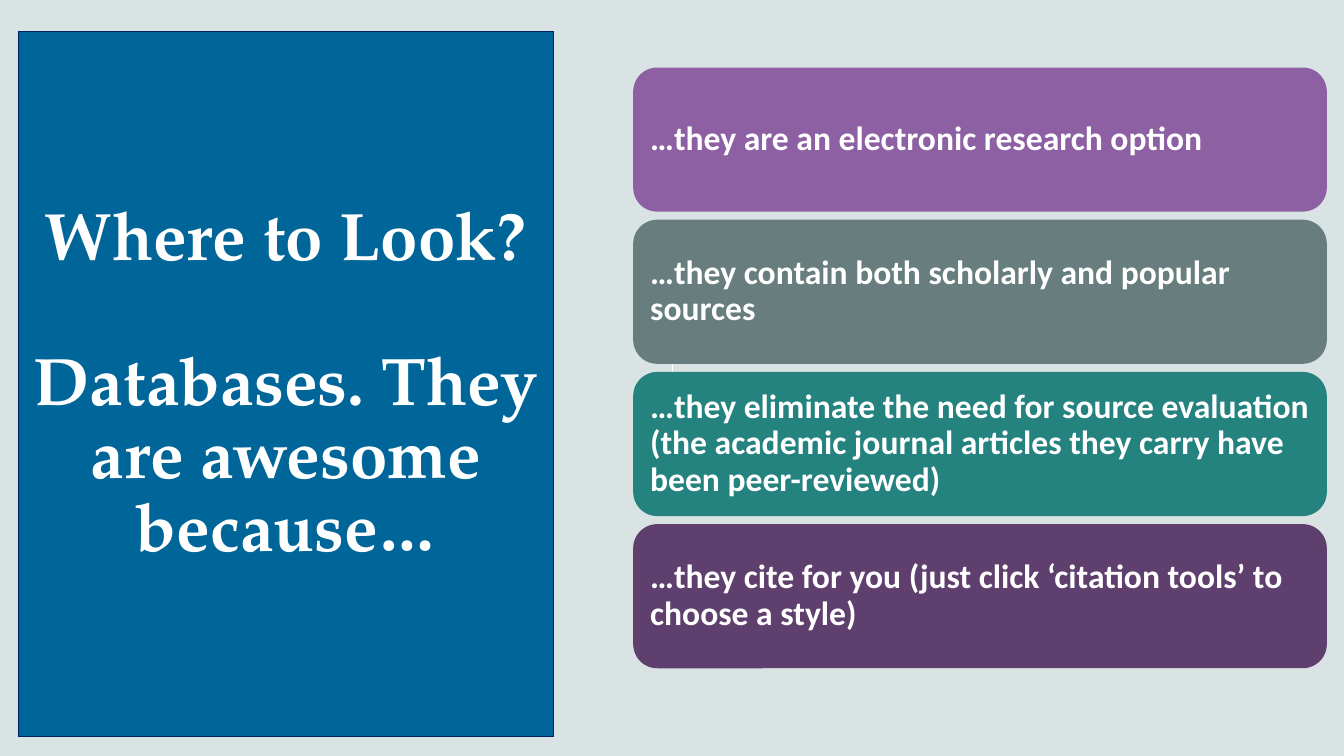
from pptx import Presentation
from pptx.dml.color import RGBColor
from pptx.enum.shapes import MSO_CONNECTOR as CONNECTOR, MSO_SHAPE as SHAPE
from pptx.enum.text import MSO_ANCHOR as ANCHOR, PP_ALIGN as ALIGN
from pptx.oxml.ns import qn
from pptx.util import Inches, Pt
from lxml import etree

REASONS = [
    ("…they are an electronic research option", "8D5FA3"),
    ("…they contain both scholarly and popular sources", "687E7E"),
    ("…they eliminate the need for source evaluation (the academic journal "
     "articles they carry have been peer-reviewed)", "24827F"),
    ("…they cite for you (just click ‘citation tools’ to choose a style)", "5E3F6D"),
]


def color(hex_code):
    return RGBColor.from_string(hex_code)


def add_panel(slide, kind, box, fill):
    """Add a filled shape without outline or shadow, ready for centred text."""
    panel = slide.shapes.add_shape(kind, *map(Inches, box))
    panel.shadow.inherit = False
    panel.fill.solid()
    panel.fill.fore_color.rgb = color(fill)
    panel.line.fill.background()
    panel.text_frame.word_wrap = True
    panel.text_frame.vertical_anchor = ANCHOR.MIDDLE
    return panel


def style_paragraph(paragraph, font_name, size, align):
    paragraph.alignment = align
    paragraph.line_spacing = 0.9
    font = paragraph.font
    font.name, font.size, font.bold = font_name, Pt(size), True
    font.color.rgb = color("FFFFFF")


def add_heading(slide, box):
    heading = add_panel(slide, SHAPE.RECTANGLE, box, "006699")
    heading.line.color.rgb = color("002060")
    heading.line.width = Pt(0.75)
    frame = heading.text_frame
    question, answer = frame.paragraphs[0], frame.add_paragraph()
    question.text = "Where to Look?"
    answer.text = "Databases. They are awesome because…"
    for paragraph in (question, answer):
        style_paragraph(paragraph, "TeX Gyre Pagella", 48, ALIGN.CENTER)
    answer.space_before = Pt(52)


def add_reasons(slide, box, gap=0.08):
    left, top, width, height = box
    card_height = (height - gap * (len(REASONS) - 1)) / len(REASONS)
    pitch = card_height + gap

    # Thin line that shows between the second and third cards
    x, middle = Inches(left + 0.39), top + height / 2
    link = slide.shapes.add_connector(
        CONNECTOR.STRAIGHT, x, Inches(middle - 0.2), x, Inches(middle + 0.4))
    link.line.color.rgb = color("FFFFFF")
    link.line.width = Pt(1)
    etree.SubElement(link._element.spPr, qn("a:effectLst"))

    # Stack of cards
    for row, (reason, fill) in enumerate(REASONS):
        card = add_panel(slide, SHAPE.ROUNDED_RECTANGLE,
                         (left, top + row * pitch, width, card_height), fill)
        frame = card.text_frame
        frame.margin_left = frame.margin_right = Inches(0.1)
        frame.margin_top = frame.margin_bottom = Inches(0.1)
        frame.text = reason
        style_paragraph(frame.paragraphs[0], "Calibri", 24, ALIGN.LEFT)


def main():
    prs = Presentation()
    prs.slide_width, prs.slide_height = Inches(13.33), Inches(7.5)
    slide = prs.slides.add_slide(prs.slide_layouts[6])
    slide.background.fill.solid()
    slide.background.fill.fore_color.rgb = color("DAE3E3")
    add_heading(slide, (0.18, 0.31, 5.31, 7))
    add_reasons(slide, (6.28, 0.67, 6.88, 5.96))
    prs.save("out.pptx")


if __name__ == "__main__":
    main()
